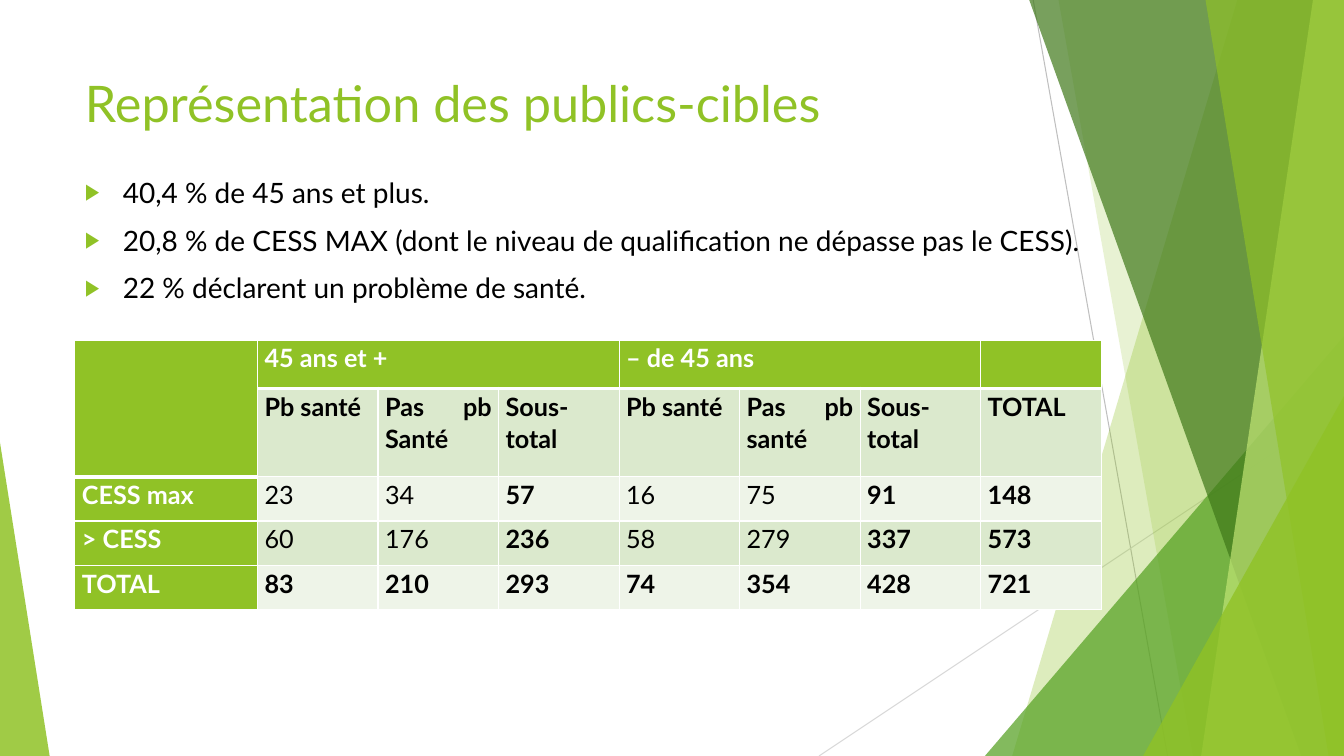
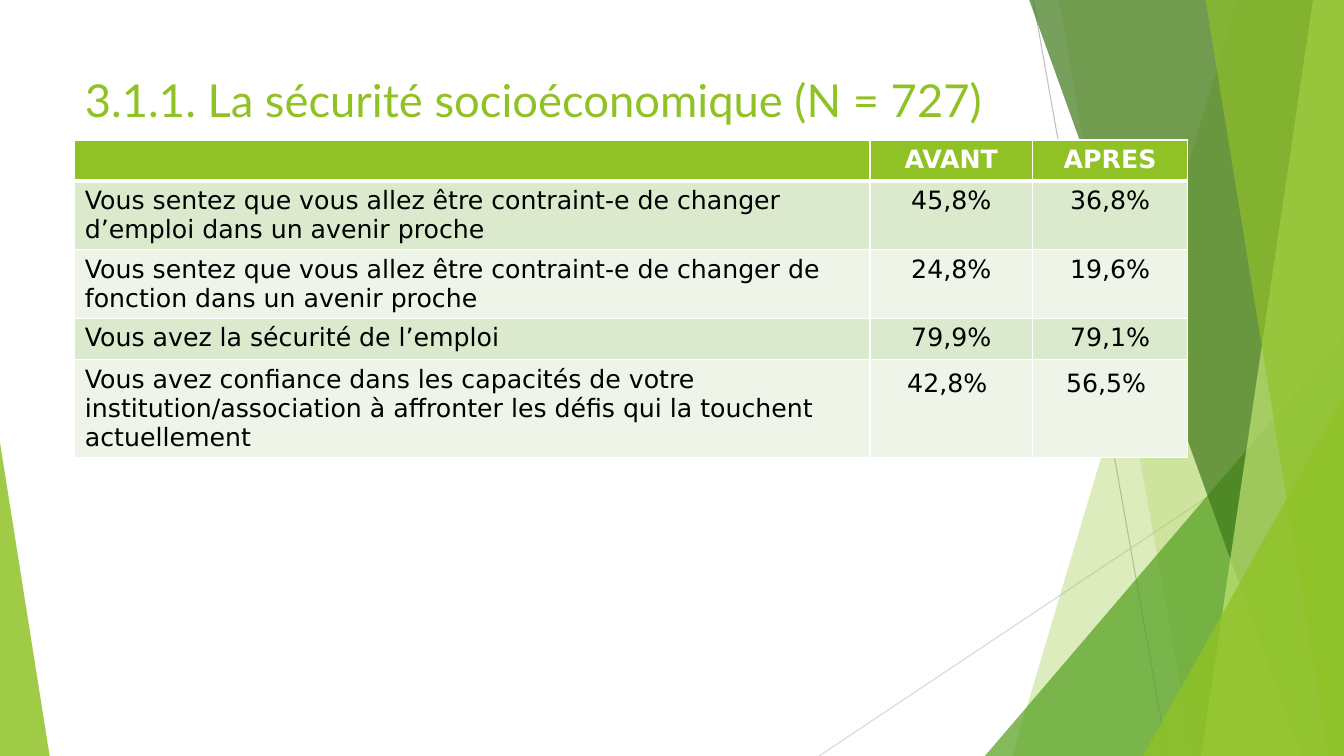
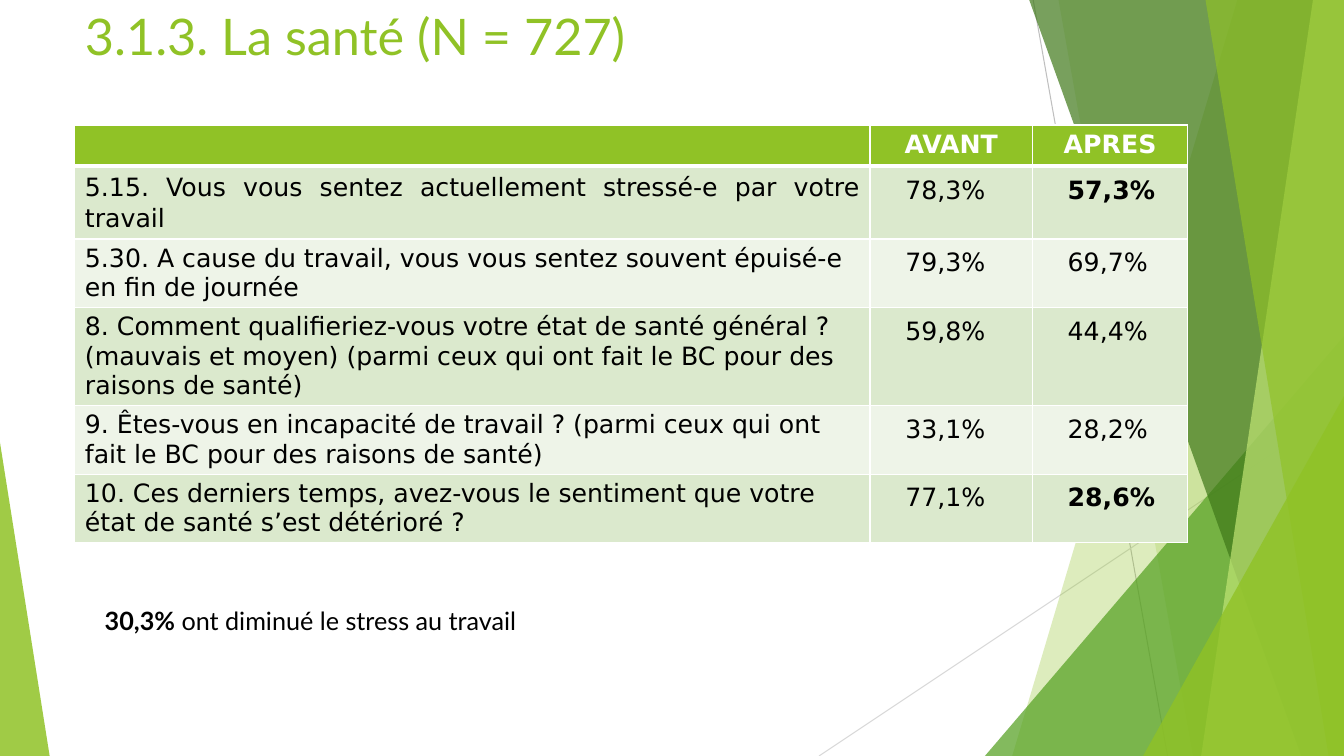
from lxml.etree import SubElement
from pptx import Presentation
from pptx.dml.color import RGBColor
from pptx.enum.shapes import MSO_CONNECTOR, MSO_SHAPE
from pptx.enum.text import MSO_ANCHOR, MSO_AUTO_SIZE, PP_ALIGN
from pptx.oxml.ns import qn
from pptx.util import Pt

LEFT, CENTER, JUSTIFY = PP_ALIGN.LEFT, PP_ALIGN.CENTER, PP_ALIGN.JUSTIFY
TOP = MSO_ANCHOR.TOP
NO_AUTOFIT = MSO_AUTO_SIZE.NONE
GROW = MSO_AUTO_SIZE.SHAPE_TO_FIT_TEXT
STRAIGHT = MSO_CONNECTOR.STRAIGHT
TRIANGLE = MSO_SHAPE.ISOSCELES_TRIANGLE

WIDTH, HEIGHT = 960, 540
MARGIN = 53.5
GREEN, LEAF, FOREST, LIME = "90C226", "54A021", "3F7819", "C0E474"
BAND_DARK, BAND_LIGHT = "DBE9CD", "EEF4E8"
WHITE, BLACK = "FFFFFF", "000000"
TEXT_FONT, SURVEY_FONT = "Lato", "DejaVu Sans"
SURVEY_WIDTHS = [568, 116, 111]
SURVEY_HEADER = ["", "AVANT", "APRES"]


def color(code):
    return RGBColor.from_string(code)


class Deck:
    def __init__(self):
        self.file = Presentation()
        self.file.slide_width, self.file.slide_height = Pt(WIDTH), Pt(HEIGHT)
        self.page = None

    def add_page(self, title, layout="Title Only", top=48, size=36):
        self.page = self.file.slides.add_slide(self.file.slide_layouts.get_by_name(layout))
        box = self.page.shapes.title
        self.place(box, MARGIN, top, 677, 104)
        box.text_frame.vertical_anchor = TOP
        box.text_frame.auto_size = NO_AUTOFIT
        paragraph = box.text_frame.paragraphs[0]
        paragraph.text = title
        paragraph.alignment = LEFT
        self.set_font(paragraph, TEXT_FONT, size, GREEN)

    def place(self, shape, left, top, width, height):
        shape.left, shape.top = Pt(left), Pt(top)
        shape.width, shape.height = Pt(width), Pt(height)

    def set_font(self, paragraph, name, size, code, bold=False):
        font = paragraph.font
        font.name, font.size, font.bold = name, Pt(size), bold
        font.color.rgb = color(code)

    def paint(self, shape, code, opacity):
        shape.shadow.inherit = False
        shape.fill.solid()
        shape.fill.fore_color.rgb = color(code)
        shape.line.fill.background()
        fill = shape.element.xpath("./p:spPr/a:solidFill/a:srgbClr")[0]
        SubElement(fill, qn("a:alpha"), val=str(opacity * 1000))

    def add_line(self, start, end, code):
        line = self.page.shapes.add_connector(STRAIGHT, *map(Pt, start + end))
        line.line.width = Pt(0.75)
        line.line.color.rgb = color(code)
        SubElement(line.element.spPr, qn("a:effectLst"))

    def add_panel(self, top_x, bottom_x, code, opacity):
        edge = -0.6
        outline = self.page.shapes.build_freeform(Pt(top_x), Pt(edge))
        corners = [(WIDTH, edge), (WIDTH, HEIGHT), (bottom_x, HEIGHT)]
        outline.add_line_segments([(Pt(x), Pt(y)) for x, y in corners])
        self.paint(outline.convert_to_shape(), code, opacity)

    def add_triangle(self, left, top, width, apex, code, opacity):
        triangle = self.page.shapes.add_shape(
            TRIANGLE, Pt(left), Pt(top), Pt(width), Pt(HEIGHT - top))
        triangle.adjustments[0] = apex
        self.paint(triangle, code, opacity)

    def decorate_master(self):
        self.add_line((738, 0), (834, HEIGHT), "BFBFBF")
        self.add_line((WIDTH, 290), (585, HEIGHT), "D9D9D9")
        self.add_panel(884, 723, GREEN, 30)
        self.add_panel(756, 852, GREEN, 20)
        self.add_triangle(703.5, 240, 256.5, 1, LEAF, 72)
        self.add_panel(735, 929.5, FOREST, 70)
        self.add_panel(938, 858, LIME, 70)
        self.add_panel(861, 949, GREEN, 65)
        self.add_triangle(816.5, 283, 143.5, 1, GREEN, 80)
        self.add_triangle(0, 316, 35.5, 0, GREEN, 85)
        tree = self.file.slide_master.shapes.element
        decor = [shape for shape in self.page.shapes if not shape.is_placeholder]
        for index, shape in enumerate(decor):
            shape.element.xpath(".//p:cNvPr")[0].set("id", str(100 + index))
            tree.insert(2 + index, shape.element)

    def add_bullets(self, lines):
        box = self.page.placeholders[1]
        self.place(box, MARGIN, 121.7, 741, 354)
        frame = box.text_frame
        frame.auto_size = NO_AUTOFIT
        frame.text = "\n".join(lines)
        for paragraph in frame.paragraphs:
            paragraph.space_before = Pt(10)
            self.set_font(paragraph, TEXT_FONT, 20, BLACK)
            self.indent(paragraph, 27, -27)
            properties = paragraph._p.get_or_add_pPr()
            bullet_color = SubElement(properties, qn("a:buClr"))
            SubElement(bullet_color, qn("a:srgbClr"), val=GREEN)
            SubElement(properties, qn("a:buSzPct"), val="80000")
            SubElement(properties, qn("a:buChar"), char="▶")

    def indent(self, paragraph, left, first):
        properties = paragraph._p.get_or_add_pPr()
        properties.set("marL", str(Pt(left)))
        properties.set("indent", str(Pt(first)))

    def add_note(self, left, top, width, height, spans):
        box = self.page.shapes.add_textbox(Pt(left), Pt(top), Pt(width), Pt(height))
        box.text_frame.word_wrap = False
        box.text_frame.auto_size = GROW
        paragraph = box.text_frame.paragraphs[0]
        self.set_font(paragraph, TEXT_FONT, 18, BLACK)
        for text, bold in spans:
            span = paragraph.add_run()
            span.text = text
            span.font.bold = bold

    def set_borders(self, cell, row):
        properties = cell._tc.get_or_add_tcPr()
        widths = {"lnL": 1, "lnR": 1, "lnT": 3 if row == 1 else 1, "lnB": 3 if row == 0 else 1}
        for index, (side, width) in enumerate(widths.items()):
            line = SubElement(properties, qn("a:" + side), w=str(Pt(width)))
            fill = SubElement(line, qn("a:solidFill"))
            SubElement(fill, qn("a:srgbClr"), val=WHITE)
            properties.insert(index, line)

    def add_table(self, top, widths, heights, rows, font, arrange,
                  bold=(), merges=(), green_column=False, margins=None):
        table = self.page.shapes.add_table(
            len(rows), len(widths), Pt(MARGIN), Pt(top), Pt(sum(widths)), Pt(sum(heights))).table
        table.first_row = table.horz_banding = False
        for column, width in zip(table.columns, widths):
            column.width = Pt(width)
        for table_row, height in zip(table.rows, heights):
            table_row.height = Pt(height)
        for first, last in merges:
            table.cell(*first).merge(table.cell(*last))
        for row, texts in enumerate(rows):
            for column, text in enumerate(texts):
                cell = table.cell(row, column)
                heading = row == 0 or (green_column and column == 0)
                band = BAND_DARK if row % 2 else BAND_LIGHT
                cell.fill.solid()
                cell.fill.fore_color.rgb = color(GREEN if heading else band)
                self.set_borders(cell, row)
                if margins:
                    (cell.margin_left, cell.margin_top,
                     cell.margin_right, cell.margin_bottom) = map(Pt, margins)
                if text:
                    paragraph = cell.text_frame.paragraphs[0]
                    paragraph.text = text
                    self.set_font(paragraph, font, 18, WHITE if heading else BLACK,
                                  heading or (row, column) in bold)
                    arrange(paragraph, row, column)

    def arrange_count(self, paragraph, row, column):
        paragraph.alignment = JUSTIFY
        paragraph.line_spacing = 1.07
        paragraph.space_after = Pt(8)

    def arrange_security(self, paragraph, row, column):
        paragraph.alignment = CENTER if column else LEFT
        if row == 4 and column:
            paragraph.line_spacing = 1.15

    def arrange_health(self, paragraph, row, column):
        if row == 0:
            paragraph.alignment = CENTER
        elif column:
            paragraph.alignment = JUSTIFY
            paragraph.line_spacing = 1.15
            self.indent(paragraph, 18, 0)
            if row < 3:
                paragraph.space_after = Pt(10)
        elif row == 1:
            paragraph.alignment = JUSTIFY
            paragraph.line_spacing = 1.07


def add_audience_page(deck):
    deck.add_page("Représentation des publics-cibles", "Title and Content")
    deck.decorate_master()
    deck.add_bullets([
        "40,4 % de 45 ans et plus.",
        "20,8 % de CESS MAX (dont le niveau de qualification ne dépasse pas le CESS).",
        "22 % déclarent un problème de santé.",
    ])
    rows = [
        ["", "45 ans et +", "", "", "– de 45 ans", "", "", ""],
        ["", "Pb santé", "Pas pb Santé", "Sous-total",
         "Pb santé", "Pas pb santé", "Sous-total", "TOTAL"],
        ["CESS max", "23", "34", "57", "16", "75", "91", "148"],
        ["> CESS", "60", "176", "236", "58", "279", "337", "573"],
        ["TOTAL", "83", "210", "293", "74", "354", "428", "721"],
    ]
    totals = {(row, column) for row in range(1, 5) for column in range(1, 8)
              if row in (1, 4) or column in (3, 6, 7)}
    deck.add_table(
        243, [130.5] + [86.1] * 7, [34.5, 63] + [31.7] * 3, rows, TEXT_FONT,
        deck.arrange_count, bold=totals, green_column=True, margins=(5, 0.5, 5, 0),
        merges=[((0, 0), (1, 0)), ((0, 1), (0, 3)), ((0, 4), (0, 6))])


def add_security_page(deck):
    deck.add_page("3.1.1. La sécurité socioéconomique (N = 727)", size=32.4)
    rows = [
        SURVEY_HEADER,
        ["Vous sentez que vous allez être contraint-e de changer d’emploi dans un avenir proche",
         "45,8%", "36,8%"],
        ["Vous sentez que vous allez être contraint-e de changer de fonction dans un avenir proche",
         "24,8%", "19,6%"],
        ["Vous avez la sécurité de l’emploi", "79,9%", "79,1%"],
        ["Vous avez confiance dans les capacités de votre institution/association "
         "à affronter les défis qui la touchent actuellement", "42,8% ", "56,5% "],
    ]
    deck.add_table(100, SURVEY_WIDTHS, [29.5, 49, 49, 29.5, 70], rows, SURVEY_FONT,
                   deck.arrange_security)


def add_health_page(deck):
    deck.add_page("3.1.3. La santé (N = 727)", top=0)
    rows = [
        SURVEY_HEADER,
        ["5.15. Vous vous sentez actuellement stressé-e par votre travail", "78,3%", "57,3%"],
        ["5.30. A cause du travail, vous vous sentez souvent épuisé-e en fin de journée",
         "79,3%", "69,7%"],
        ["8. Comment qualifieriez-vous votre état de santé général ? (mauvais et moyen) "
         "(parmi ceux qui ont fait le BC pour des raisons de santé)", "59,8%", "44,4%"],
        ["9. Êtes-vous en incapacité de travail ? (parmi ceux qui ont fait le BC "
         "pour des raisons de santé)", "33,1%", "28,2%"],
        ["10. Ces derniers temps, avez-vous le sentiment que votre état de santé "
         "s’est détérioré ?", "77,1%", "28,6%"],
    ]
    deck.add_table(89.3, SURVEY_WIDTHS, [29.5, 51, 49, 70, 49, 49], rows, SURVEY_FONT,
                   deck.arrange_health, bold={(1, 2), (5, 2)})
    deck.add_note(67.7, 429, 325, 51,
                  [("30,3%", True), (" ont diminué le stress au travail", False)])


def main():
    deck = Deck()
    add_audience_page(deck)
    add_security_page(deck)
    add_health_page(deck)
    deck.file.save("out.pptx")


if __name__ == "__main__":
    main()
